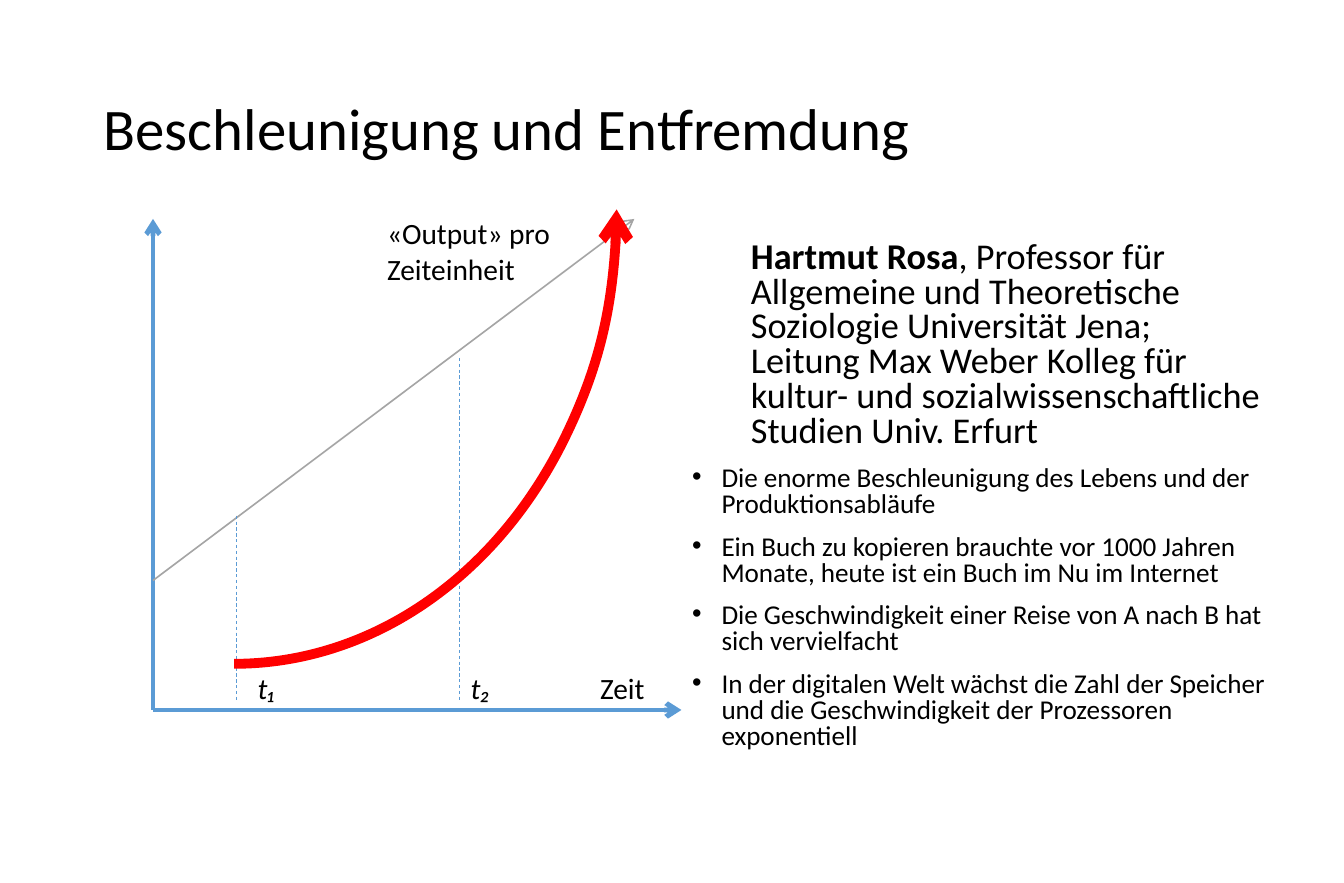
from dataclasses import dataclass

from lxml.etree import SubElement
from pptx import Presentation
from pptx.dml.color import RGBColor
from pptx.enum.dml import MSO_LINE_DASH_STYLE as Dash
from pptx.enum.shapes import MSO_CONNECTOR, MSO_SHAPE
from pptx.enum.text import MSO_ANCHOR, MSO_AUTO_SIZE, PP_ALIGN
from pptx.oxml.ns import qn
from pptx.util import Pt

BLACK = RGBColor(0x00, 0x00, 0x00)
BLUE = RGBColor(0x5B, 0x9B, 0xD5)
GRAY = RGBColor(0xA5, 0xA5, 0xA5)
RED = RGBColor(0xFF, 0x00, 0x00)
FONT = "Calibri"

# Diagram coordinates in points
ORIGIN_X, ORIGIN_Y = 93.6, 434.2
ARROW_TOP = 133.9
MARKER_BOTTOM = 428.4
LABEL_TOP = 406.1


@dataclass(frozen=True)
class Line:
    start: tuple[float, float]
    end: tuple[float, float]
    color: RGBColor
    width: float
    arrow: bool = False
    dashed: bool = False


@dataclass(frozen=True)
class Label:
    text: str
    left: float
    top: float
    width: float
    height: float
    italic: bool = False


LINES = [
    Line((ORIGIN_X, ORIGIN_Y), (416.9, ORIGIN_Y), BLUE, 3, arrow=True),
    Line((ORIGIN_X, ORIGIN_Y), (ORIGIN_X, ARROW_TOP), BLUE, 3, arrow=True),
    Line((ORIGIN_X, 355), (388.1, ARROW_TOP), GRAY, 1, arrow=True),
    Line((144.7, 315.4), (144.7, MARKER_BOTTOM), BLUE, 0.5, dashed=True),
    Line((280.8, 218.9), (280.8, MARKER_BOTTOM), BLUE, 0.5, dashed=True),
]

LABELS = [
    Label("t₁", 150.5, LABEL_TOP, 33.8, 28.8, italic=True),
    Label("t₂", 280.8, LABEL_TOP, 33.8, 28.8, italic=True),
    Label("«Output» pro Zeiteinheit", 229.7, 128.2, 147.6, 51.1),
    Label("Zeit", 360, LABEL_TOP, 56.9, 28.8),
]

PERSON = "Hartmut Rosa"
POSITION = (
    ", Professor für Allgemeine und Theoretische Soziologie Universität Jena; "
    "Leitung Max Weber Kolleg für kultur- und sozialwissenschaftliche "
    "Studien Univ. Erfurt"
)
BULLETS = [
    "Die enorme Beschleunigung des Lebens und der Produktionsabläufe",
    "Ein Buch zu kopieren brauchte vor 1000 Jahren Monate, heute ist ein Buch im Nu im Internet",
    "Die Geschwindigkeit einer Reise von A nach B hat sich vervielfacht",
    "In der digitalen Welt wächst die Zahl der Speicher und die Geschwindigkeit der Prozessoren exponentiell",
]


def add_text(paragraph, text: str, *, size: float, bold: bool = False, italic: bool = False) -> None:
    run = paragraph.add_run()
    run.text = text
    run.font.name = FONT
    run.font.size = Pt(size)
    run.font.bold = bold
    run.font.italic = italic
    run.font.color.rgb = BLACK


def format_paragraph(paragraph, *, spacing: float, before: float = 0, margin: float = 0,
                     indent: float = 0, bullet: str = "") -> None:
    paragraph.alignment = PP_ALIGN.LEFT
    paragraph.line_spacing = spacing
    paragraph.space_before = Pt(before)
    properties = paragraph._p.get_or_add_pPr()
    properties.set("marL", str(Pt(margin)))
    properties.set("indent", str(Pt(indent)))
    if bullet:
        SubElement(properties, qn("a:buFont"), typeface="Arial")
        SubElement(properties, qn("a:buChar"), char=bullet)
    else:
        SubElement(properties, qn("a:buNone"))


def place(shape, left: float, top: float, width: float, height: float) -> None:
    shape.left, shape.top = Pt(left), Pt(top)
    shape.width, shape.height = Pt(width), Pt(height)


def style_line(shape, color: RGBColor, width: float, arrow: bool) -> None:
    shape.line.color.rgb = color
    shape.line.width = Pt(width)
    if arrow:
        SubElement(shape.line._get_or_add_ln(), qn("a:tailEnd"), type="arrow")


def draw_line(slide, line: Line) -> None:
    connector = slide.shapes.add_connector(
        MSO_CONNECTOR.STRAIGHT, *(Pt(value) for value in line.start + line.end))
    if line.dashed:
        connector.line.dash_style = Dash.DASH
    style_line(connector, line.color, line.width, line.arrow)
    SubElement(connector._element.spPr, qn("a:effectLst"))


def draw_label(slide, label: Label) -> None:
    box = slide.shapes.add_textbox(
        Pt(label.left), Pt(label.top), Pt(label.width), Pt(label.height))
    frame = box.text_frame
    frame.word_wrap = True
    frame.auto_size = MSO_AUTO_SIZE.SHAPE_TO_FIT_TEXT
    add_text(frame.paragraphs[0], label.text, size=18, italic=label.italic)


def draw_curve(slide) -> None:
    curve = slide.shapes.add_shape(MSO_SHAPE.ARC, Pt(-90.7), Pt(-149.8), Pt(468), Pt(555.8))
    curve.shadow.inherit = False
    curve.fill.background()
    curve._element.spPr.find(qn("a:xfrm")).set("flipV", "1")
    style_line(curve, RED, 6, arrow=True)


def fill_title(title) -> None:
    place(title, 56.2, 51.1, 709.2, 59)
    title.text_frame.auto_size = MSO_AUTO_SIZE.NONE
    title.text_frame.vertical_anchor = MSO_ANCHOR.MIDDLE
    paragraph = title.text_frame.paragraphs[0]
    format_paragraph(paragraph, spacing=0.9)
    add_text(paragraph, "Beschleunigung und Entfremdung", size=36)


def fill_body(body) -> None:
    place(body, 416.2, 144, 366.5, 342.7)
    frame = body.text_frame
    frame.auto_size = MSO_AUTO_SIZE.NONE
    introduction = frame.paragraphs[0]
    introduction.level = 1
    format_paragraph(introduction, spacing=0.8, margin=36)
    add_text(introduction, PERSON, size=22.2, bold=True)
    add_text(introduction, POSITION, size=22.2)
    for text in BULLETS:
        paragraph = frame.add_paragraph()
        format_paragraph(paragraph, spacing=0.8, before=10, margin=18, indent=-18, bullet="•")
        add_text(paragraph, text, size=16.6)


def main() -> None:
    presentation = Presentation()
    presentation.slide_width, presentation.slide_height = Pt(822.24), Pt(540)
    slide = presentation.slides.add_slide(presentation.slide_layouts[1])

    # Title and list
    fill_title(slide.shapes.title)
    fill_body(slide.placeholders[1])

    # Diagram: axes, linear trend, time markers, curve, labels
    for line in LINES:
        draw_line(slide, line)
    draw_curve(slide)
    for label in LABELS:
        draw_label(slide, label)

    presentation.save("out.pptx")


if __name__ == "__main__":
    main()
